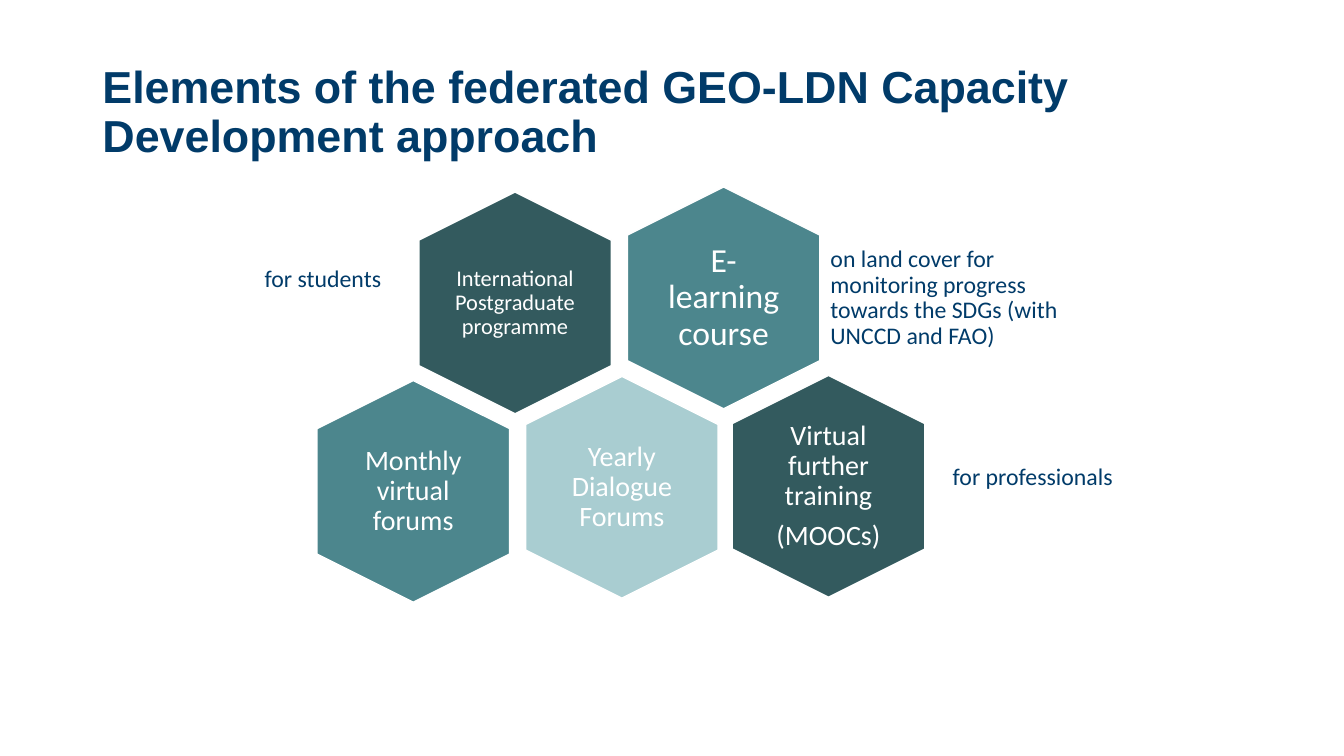
from pptx import Presentation
from pptx.dml.color import RGBColor
from pptx.enum.shapes import MSO_SHAPE
from pptx.enum.text import MSO_ANCHOR, MSO_AUTO_SIZE, PP_ALIGN
from pptx.util import Pt

HUES = {"navy": "013B69", "dark": "335A5E", "teal": "4C868D",
        "pale": "A9CDD1", "white": "FFFFFF"}
LONG, WIDE = 158.4, 137.5
CORE = (95, 108.7)

CELLS = [
    (332.9, 68.8, "teal", 24, 7.2, ["E-learning course"]),
    (183.9, 72.4, "dark", 16, 0, ["International Postgraduate programme"]),
    (407.8, 203.4, "dark", 20, 5.8, ["Virtual further training", "(MOOCs)"]),
    (260.2, 204.1, "pale", 20, 0, ["Yearly Dialogue Forums"]),
    (111.2, 207, "teal", 20, 5.8, ["Monthly virtual forums"]),
]
NOTES = [
    (404.2, 21.6, 176.4, PP_ALIGN.LEFT,
     "on land cover for monitoring progress towards the SDGs (with UNCCD and FAO)"),
    (0, 8.6, 170.6, PP_ALIGN.LEFT, "for students"),
    (439.5, 149.8, 176.4, PP_ALIGN.RIGHT, "for professionals"),
]


def rgb(hue):
    return RGBColor.from_string(HUES[hue])


def apply(item, form):
    for key, val in form.items():
        setattr(item, key, val)


def place(item, left, top, width, height):
    apply(item, {"left": Pt(left), "top": Pt(top),
                 "width": Pt(width), "height": Pt(height)})


def write(frame, lines, size, hue, align, face="Calibri", bold=False, gap=7):
    apply(frame, {"word_wrap": True, "auto_size": MSO_AUTO_SIZE.NONE,
                  "vertical_anchor": MSO_ANCHOR.MIDDLE})
    for num, line in enumerate(lines):
        para = frame.add_paragraph() if num else frame.paragraphs[0]
        para.text = line
        apply(para, {"alignment": align, "line_spacing": 0.9,
                     "space_before": Pt(0), "space_after": Pt(gap)})
        apply(para.font, {"name": face, "size": Pt(size), "bold": bold})
        para.font.color.rgb = rgb(hue)


def label(slide, box, lines, size, hue, align, pad):
    frame = slide.shapes.add_textbox(*map(Pt, box)).text_frame
    sides = ("left", "right", "top", "bottom")
    apply(frame, {f"margin_{side}": Pt(pad) for side in sides})
    write(frame, lines, size, hue, align)


def title(slide, left, top, width, height):
    head = slide.shapes.title
    place(head, left, top, width, height)
    text = "Elements of the federated GEO-LDN Capacity Development approach"
    write(head.text_frame, [text], 32, "navy", PP_ALIGN.LEFT, "Arial", True, 0)


def cell(slide, mid, row, hue, size, pad, lines):
    hexa = slide.shapes.add_shape(
        MSO_SHAPE.HEXAGON, Pt(mid - LONG / 2), Pt(row - WIDE / 2), Pt(LONG), Pt(WIDE))
    hexa.rotation = 90
    hexa.adjustments[0] = 0.25
    hexa.shadow.inherit = False
    hexa.fill.solid()
    hexa.fill.fore_color.rgb = rgb(hue)
    hexa.line.color.rgb = rgb("white")
    hexa.line.width = Pt(1)
    wide, high = CORE
    label(slide, (mid - wide / 2, row - high / 2, wide, high),
          lines, size, "white", PP_ALIGN.CENTER, pad)


def comb(slide, left, top):
    for mid, row, *rest in CELLS:
        cell(slide, left + mid, top + row, *rest)
    for dx, dy, width, align, text in NOTES:
        label(slide, (left + dx, top + dy, width, 95), [text], 17, "navy", align, 5)


def main():
    deck = Presentation()
    apply(deck, {"slide_width": Pt(960), "slide_height": Pt(540)})
    slide = deck.slides.add_slide(deck.slide_layouts[5])
    title(slide, 66, 28.8, 828, 104.4)
    comb(slide, 184, 144)
    deck.save("out.pptx")


if __name__ == "__main__":
    main()
